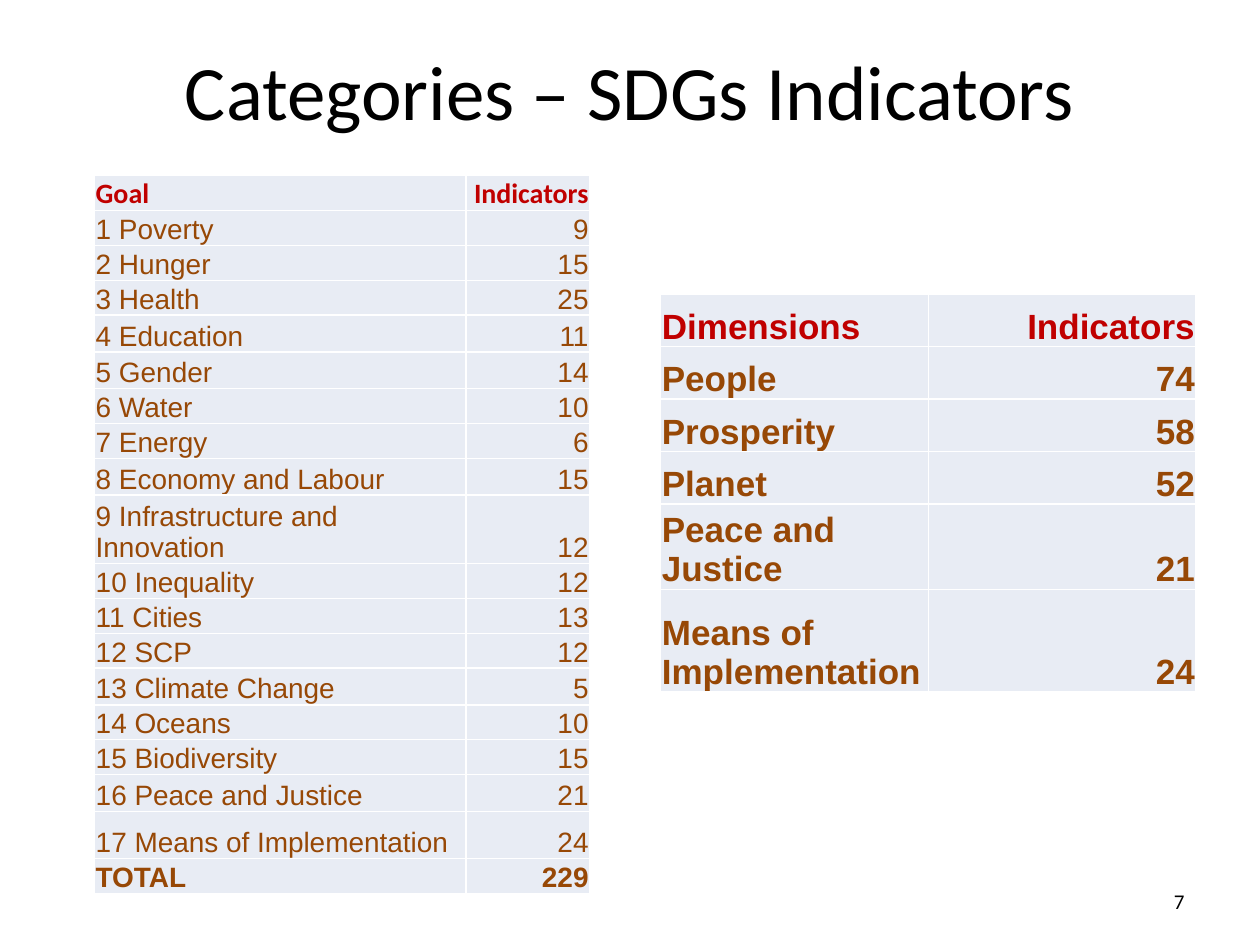
from dataclasses import dataclass

from lxml import etree
from pptx import Presentation
from pptx.dml.color import RGBColor
from pptx.enum import text
from pptx.oxml import ns
from pptx.util import Pt


@dataclass(frozen=True)
class Theme:
    ink: str = "000000"
    heading: str = "C00000"
    body: str = "974806"
    cell: str = "E8ECF4"
    rule: str = "FFFFFF"
    title_size: int = 44
    dimension_size: int = 20
    goal_size: int = 16
    number_size: int = 12
    title_font: str = "Calibri"
    body_font: str = "Arial"


THEME = Theme()
LEFT, RIGHT, CENTER = text.PP_ALIGN.LEFT, text.PP_ALIGN.RIGHT, text.PP_ALIGN.CENTER
HEADING = {"name": THEME.body_font, "color": THEME.heading, "bold": True}
BODY = {"name": THEME.body_font, "color": THEME.body, "bold": False}
STRONG = BODY | {"bold": True}

GOALS = [
    ("Goal", "Indicators"),
    ("1 Poverty", "9"),
    ("2 Hunger", "15"),
    ("3 Health", "25"),
    ("4 Education", "11"),
    ("5 Gender", "14"),
    ("6 Water", "10"),
    ("7 Energy", "6"),
    ("8 Economy and Labour", "15"),
    ("9 Infrastructure and Innovation", "12"),
    ("10 Inequality", "12"),
    ("11 Cities", "13"),
    ("12 SCP", "12"),
    ("13 Climate Change", "5"),
    ("14 Oceans", "10"),
    ("15 Biodiversity", "15"),
    ("16 Peace and Justice", "21"),
    ("17 Means of Implementation", "24"),
    ("TOTAL", "229"),
]
GOAL_ROW = 19.6
TALL_GOAL_ROWS = {4: 21, 5: 21, 8: 21, 9: 27, 13: 21, 16: 21, 17: 27}

DIMENSIONS = [
    ("Dimensions", "Indicators"),
    ("People", "74"),
    ("Prosperity", "58"),
    ("Planet", "52"),
    ("Peace and Justice", "21"),
    ("Means of Implementation", "24"),
]
DIMENSION_ROW = 30
TALL_DIMENSION_ROWS = {4: 36.7, 5: 58.8}


def write(frame, words, align, style):
    para = frame.paragraphs[0]
    para.alignment = align
    span = para.add_run()
    span.text = words
    for key, value in style.items():
        if key == "color":
            span.font.color.rgb = RGBColor.from_string(value)
        else:
            setattr(span.font, key, value)


def add_label(page, box, words, align, anchor, size):
    frame = page.shapes.add_textbox(*map(Pt, box)).text_frame
    frame.word_wrap = True
    frame.vertical_anchor = anchor
    style = {"name": THEME.title_font, "size": Pt(size), "color": THEME.ink}
    write(frame, words, align, style)


def add_borders(cell):
    properties = cell._tc.get_or_add_tcPr()
    for index, side in enumerate(("lnL", "lnR", "lnT", "lnB")):
        line = etree.Element(ns.qn(f"a:{side}"), w=str(Pt(1)))
        fill = etree.SubElement(line, ns.qn("a:solidFill"))
        etree.SubElement(fill, ns.qn("a:srgbClr"), val=THEME.rule)
        properties.insert(index, line)


def fill_cell(cell, words, align, style):
    settings = {
        "margin_left": Pt(0.72),
        "margin_right": Pt(0.72),
        "margin_top": Pt(0.72),
        "margin_bottom": Pt(0),
        "vertical_anchor": text.MSO_ANCHOR.BOTTOM,
    }
    for key, value in settings.items():
        setattr(cell, key, value)
    cell.fill.solid()
    cell.fill.fore_color.rgb = RGBColor.from_string(THEME.cell)
    add_borders(cell)
    write(cell.text_frame, words, align, style)


def add_indicator_table(page, origin, widths, rows, heights, styles, size):
    box = (*origin, sum(widths), sum(heights))
    table = page.shapes.add_table(len(rows), len(widths), *map(Pt, box)).table
    table.first_row = table.horz_banding = False
    for column, width in zip(table.columns, widths):
        column.width = Pt(width)
    for index, (row, height, style) in enumerate(zip(rows, heights, styles)):
        table.rows[index].height = Pt(height)
        for cell, words, align in zip(table.rows[index].cells, row, (LEFT, RIGHT)):
            fill_cell(cell, words, align, style | {"size": Pt(size)})


def row_heights(rows, usual, tall):
    return [tall.get(index, usual) for index in range(len(rows))]


def add_goals(page, origin):
    styles = [HEADING | {"name": THEME.title_font}, *[BODY] * (len(GOALS) - 2), STRONG]
    heights = row_heights(GOALS, GOAL_ROW, TALL_GOAL_ROWS)
    add_indicator_table(page, origin, (212.4, 70.6), GOALS, heights, styles, THEME.goal_size)


def add_dimensions(page, origin):
    styles = [HEADING, *[STRONG] * (len(DIMENSIONS) - 1)]
    heights = row_heights(DIMENSIONS, DIMENSION_ROW, TALL_DIMENSION_ROWS)
    add_indicator_table(
        page, origin, (153, 153), DIMENSIONS, heights, styles, THEME.dimension_size
    )


def main():
    deck = Presentation()
    deck.slide_width, deck.slide_height = Pt(720), Pt(540)
    page = deck.slides.add_slide(deck.slide_layouts[6])
    add_label(page, (36, 21.6, 648, 90), "Categories – SDGs Indicators",
              CENTER, text.MSO_ANCHOR.TOP, THEME.title_size)
    add_label(page, (516, 500.5, 168, 28.75), "7",
              RIGHT, text.MSO_ANCHOR.MIDDLE, THEME.number_size)
    add_goals(page, (54, 100.4))
    add_dimensions(page, (377.5, 168))
    deck.save("out.pptx")


if __name__ == "__main__":
    main()
